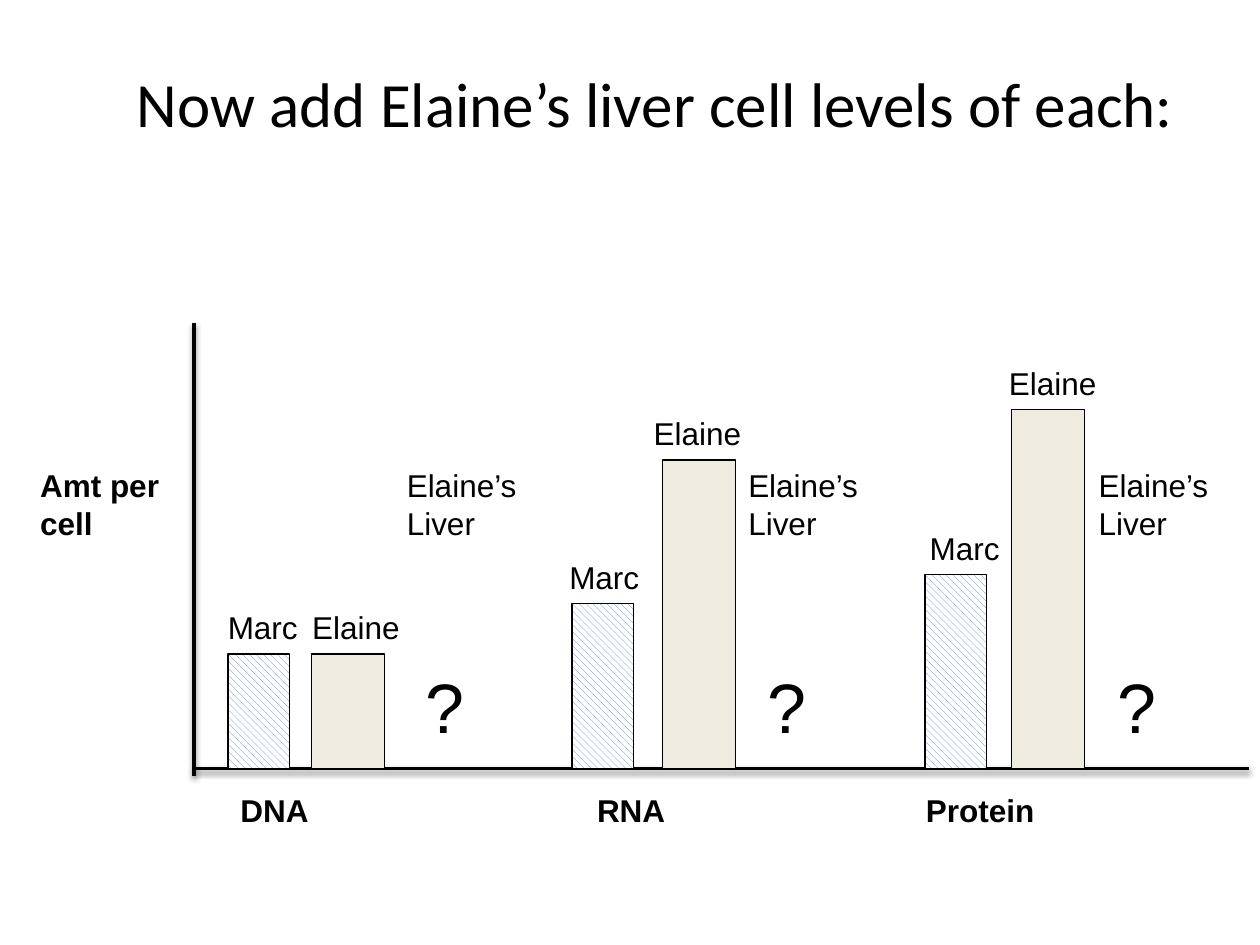
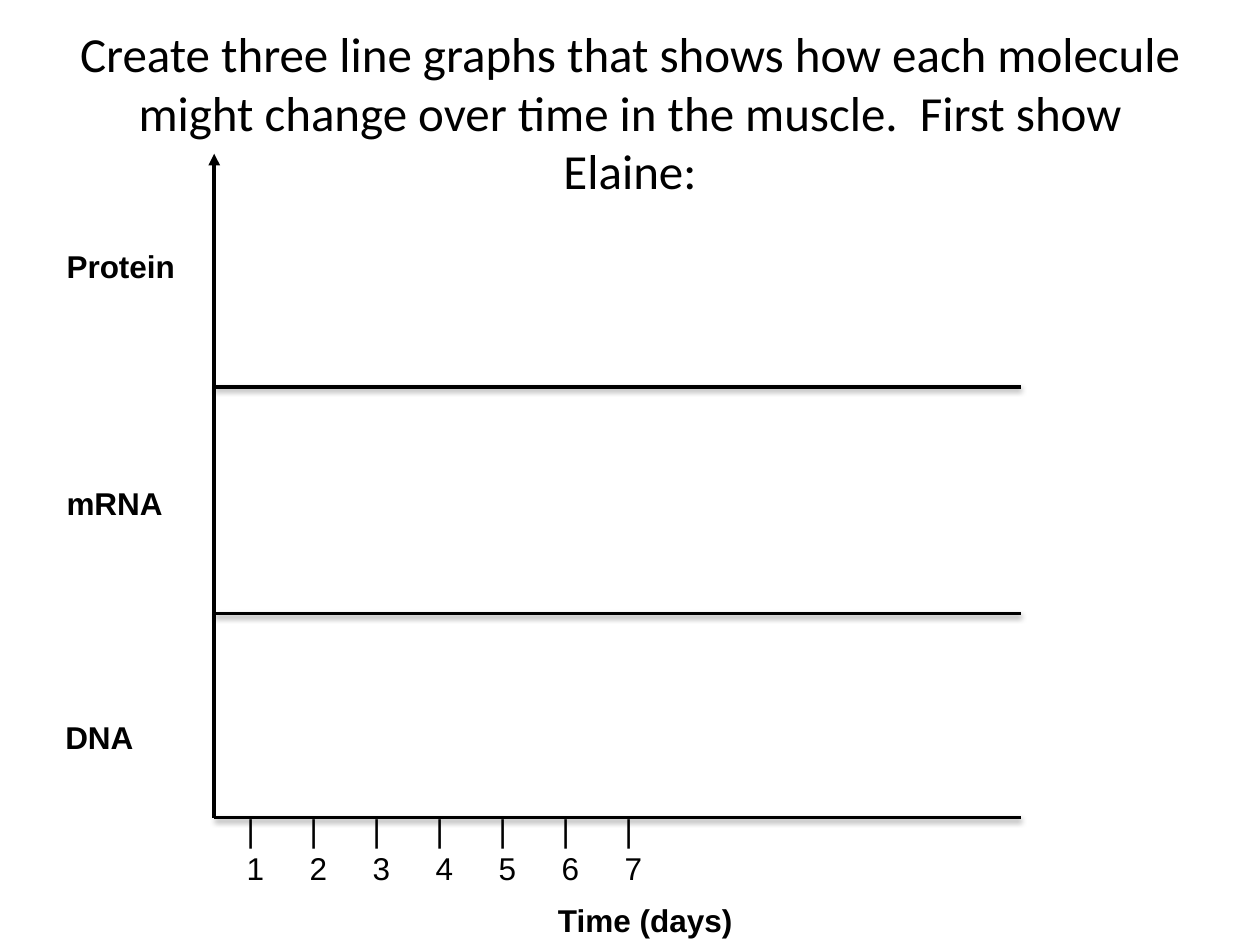
from lxml import etree
from pptx import Presentation
from pptx.dml.color import RGBColor
from pptx.enum.dml import MSO_PATTERN
from pptx.enum.shapes import MSO_CONNECTOR, MSO_SHAPE
from pptx.enum.text import MSO_ANCHOR, PP_ALIGN
from pptx.oxml.ns import qn
from pptx.util import Emu, Pt

STRAIGHT = MSO_CONNECTOR.STRAIGHT
RECTANGLE = MSO_SHAPE.RECTANGLE
HATCH = MSO_PATTERN.WIDE_DOWNWARD_DIAGONAL
TOP, MIDDLE = MSO_ANCHOR.TOP, MSO_ANCHOR.MIDDLE
LEFT, CENTER = PP_ALIGN.LEFT, PP_ALIGN.CENTER

EMU_PER_PX = 9144
BLANK_LAYOUT = 6


def px(length):
    return Emu(length * EMU_PER_PX)


def rgb(value):
    return RGBColor.from_string(value)


class Deck:
    ink = "000000"
    paper = "FFFFFF"
    hatch_color = "4F81BD"
    solid_color = "EEECE1"
    title_font = "Calibri"
    body_font = "Arial"

    def __init__(self):
        self.presentation = Presentation()
        self.presentation.slide_width = px(1000)
        self.presentation.slide_height = px(750)
        self.slide = None

    def add_slide(self):
        layout = self.presentation.slide_layouts[BLANK_LAYOUT]
        self.slide = self.presentation.slides.add_slide(layout)

    def text(self, content, left, top, width, height=40, *, size=18, font=None,
             bold=False, align=LEFT, anchor=TOP, wrap=False):
        box = self.slide.shapes.add_textbox(px(left), px(top), px(width), px(height))
        frame = box.text_frame
        frame.word_wrap = wrap
        frame.vertical_anchor = anchor
        frame.text = content
        for paragraph in frame.paragraphs:
            paragraph.alignment = align
            for run in paragraph.runs:
                run.font.name = font or self.body_font
                run.font.size = Pt(size)
                run.font.bold = bold
                run.font.color.rgb = rgb(self.ink)

    def title(self, content, left, top, width, height, size):
        self.text(content, left, top, width, height, size=size, font=self.title_font,
                  align=CENTER, anchor=MIDDLE, wrap=True)

    def line(self, start, end, width=2, shadow=True, arrow=False):
        connector = self.slide.shapes.add_connector(
            STRAIGHT, px(start[0]), px(start[1]), px(end[0]), px(end[1]))
        connector.line.width = Pt(width)
        connector.line.color.rgb = rgb(self.ink)
        properties = connector._element.spPr
        if arrow:
            etree.SubElement(properties.find(qn("a:ln")), qn("a:tailEnd"), type="triangle")
        effects = etree.SubElement(properties, qn("a:effectLst"))
        if shadow:
            outer = etree.SubElement(
                effects, qn("a:outerShdw"), blurRad=str(Pt(3.1)), dist=str(Pt(1.6)),
                dir="5400000", rotWithShape="0")
            color = etree.SubElement(outer, qn("a:srgbClr"), val=self.ink)
            etree.SubElement(color, qn("a:alpha"), val="38000")

    def bar(self, left, base, width, height, hatched=False):
        shape = self.slide.shapes.add_shape(
            RECTANGLE, px(left), px(base - height), px(width), px(height))
        shape.shadow.inherit = False
        shape.line.color.rgb = rgb(self.ink)
        shape.line.width = Pt(0.75)
        if hatched:
            shape.fill.patterned()
            shape.fill.pattern = HATCH
            shape.fill.fore_color.rgb = rgb(self.hatch_color)
            shape.fill.back_color.rgb = rgb(self.paper)
        else:
            shape.fill.solid()
            shape.fill.fore_color.rgb = rgb(self.solid_color)


def build_liver_levels(deck):
    base = 610
    label_rise = 41
    molecules = [
        ("DNA", 181, (181, 91, 171), (247, 91, 238), 313),
        ("RNA", 464, (454, 131, 442), (526, 245, 509), 584),
        ("Protein", 725, (734, 154, 728), (803, 285, 791), 862),
    ]
    deck.add_slide()
    deck.title("Now add Elaine’s liver cell levels of each:", 70, 0, 900, 162, 36)
    deck.line((154, 256), (154, 616))
    deck.line((154, base), (991, base))
    deck.text("Amt per cell", 22, 365, 118, 71, bold=True, wrap=True)

    for molecule, molecule_left, marc, elaine, liver_left in molecules:
        deck.text(molecule, molecule_left, 623, 120, bold=True, wrap=True)
        people = [("Marc", marc, 49, 76, True), ("Elaine", elaine, 58, 90, False)]
        for person, (left, level, label_left), width, label_width, hatched in people:
            deck.bar(left, base, width, level, hatched)
            deck.text(person, label_left, base - level - label_rise, label_width)
        deck.text("Elaine’s\nLiver", liver_left, 365, 129, 70, wrap=True)
        deck.text("?", liver_left + 15, 522, 51, 77, size=40)


def build_time_graphs(deck):
    axis_left, axis_right, axis_base = 170, 810, 649
    days = range(1, 8)
    deck.add_slide()
    deck.title("Create three line graphs that shows how each molecule might change "
               "over time in the muscle.  First show Elaine:", 50, 26, 900, 125, 28)
    for level in (axis_base, 487, 307):
        deck.line((axis_left, level), (axis_right, level))
    deck.line((axis_left, axis_base), (axis_left, 122), width=2.25, shadow=False, arrow=True)

    for molecule, left, top, width in [
        ("Protein", 43, 191, 106), ("mRNA", 43, 379, 97), ("DNA", 42, 565, 74),
    ]:
        deck.text(molecule, left, top, width, bold=True)

    ticks = "\t".join("|" for _ in days)
    numbers = "\t".join(str(day) for day in days)
    deck.text(f"{ticks}\n{numbers}", 186, 639, 634, 70)
    deck.text("Time (days)", 433, 710, 159, bold=True)


def main():
    deck = Deck()
    build_liver_levels(deck)
    build_time_graphs(deck)
    deck.presentation.save("out.pptx")


if __name__ == "__main__":
    main()
